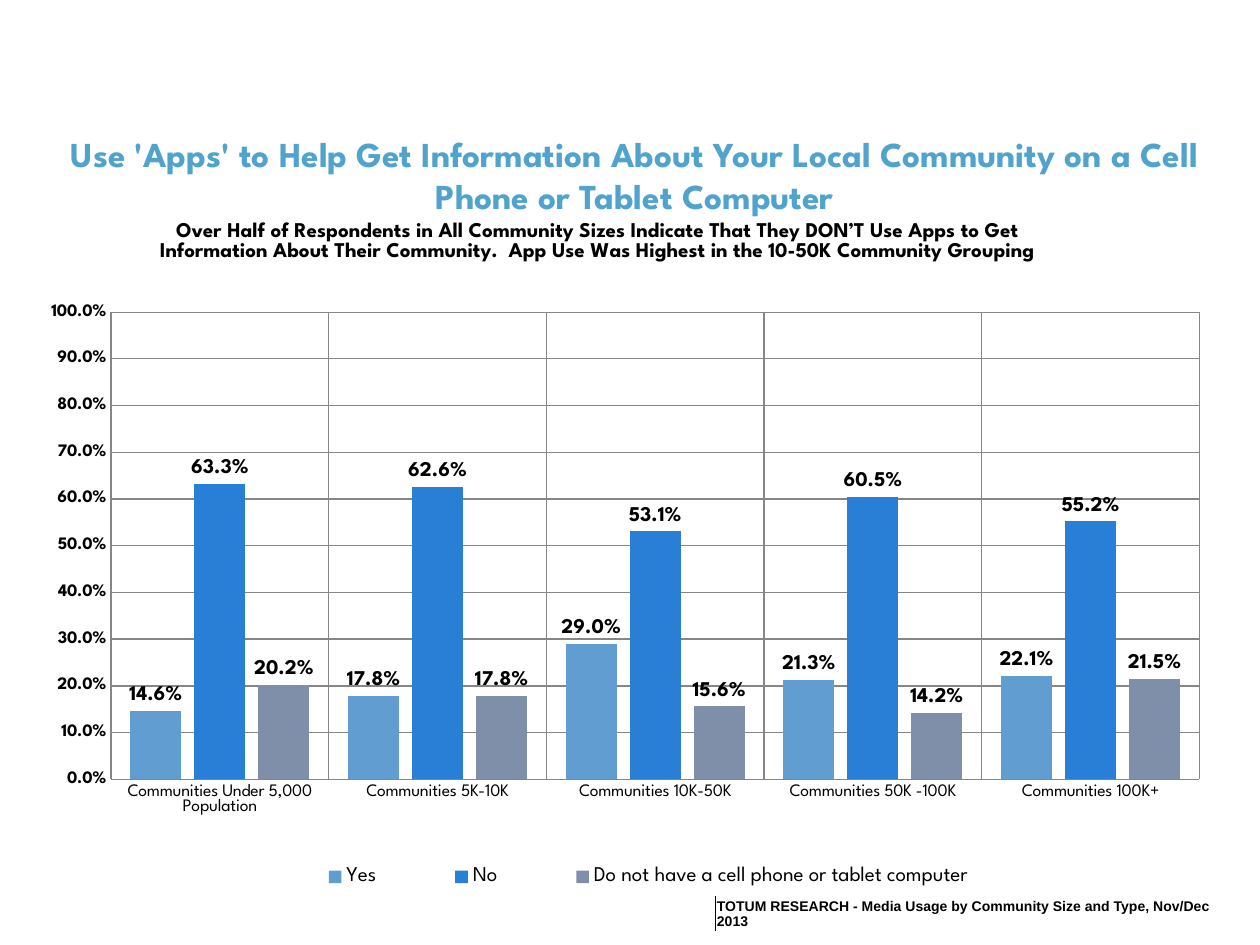
from lxml.etree import SubElement
from pptx import Presentation
from pptx.chart.data import CategoryChartData
from pptx.dml.color import RGBColor
from pptx.enum.chart import XL_CHART_TYPE, XL_LABEL_POSITION, XL_LEGEND_POSITION, XL_TICK_MARK
from pptx.enum.text import MSO_ANCHOR, PP_ALIGN
from pptx.oxml import parse_xml
from pptx.oxml.ns import nsdecls, qn
from pptx.util import Inches, Pt

# Content
FONT = "League Spartan"
TITLE = ("Use 'Apps' to Help Get Information About Your Local Community "
         "on a Cell Phone or Tablet Computer")
CHART_TITLE = ("Over Half of Respondents in All Community Sizes Indicate That They "
               "DON’T Use Apps to Get Information About Their Community.  "
               "App Use Was Highest in the 10-50K Community Grouping")
SOURCE = "TOTUM RESEARCH - Media Usage by Community Size and Type, Nov/Dec 2013"
CATEGORIES = ["Communities Under 5,000 Population", "Communities 5K-10K",
              "Communities 10K-50K", "Communities 50K -100K", "Communities 100K+"]
SERIES = [
    ("Yes", "629DD1", [14.6, 17.8, 29, 21.3, 22.1]),
    ("No", "297FD5", [63.3, 62.6, 53.1, 60.5, 55.2]),
    ("Do not have a cell phone or tablet computer", "7F8FA9",
     [20.2, 17.8, 15.6, 14.2, 21.5]),
]
PERCENT = r"0.0\%"
GRID = "868686"

# Chart parts, as fractions of the chart frame
PLOT_AREA = {"x": 0.067, "y": 0.193, "w": 0.917, "h": 0.618}
TITLE_AREA = {"x": 0.105, "y": 0.067}
LEGEND_AREA = {"x": 0.19, "y": 0.91, "w": 0.66, "h": 0.06}


def rgb(value):
    return RGBColor.from_string(value)


def style(font, size, color="000000", bold=False, name=FONT):
    font.name, font.size, font.bold = name, Pt(size), bold
    font.color.rgb = rgb(color)


def place(element, area, after=None, inner=False):
    """Give a chart part a fixed layout, set after the named child or first."""
    for old in element.findall(qn("c:layout")):
        element.remove(old)
    layout = parse_xml(f"<c:layout {nsdecls('c')}/>")
    manual = SubElement(layout, qn("c:manualLayout"))
    target = [("layoutTarget", "inner")] if inner else []
    for tag, value in [*target, ("xMode", "edge"), ("yMode", "edge"), *area.items()]:
        SubElement(manual, qn("c:" + tag)).set("val", str(value))
    if after:
        element.find(qn(after)).addnext(layout)
    else:
        element.insert(0, layout)


prs = Presentation()
prs.slide_width, prs.slide_height = Inches(10), Inches(7.5)
s = prs.slides.add_slide(prs.slide_layouts[5])

# Chart
data = CategoryChartData(number_format=PERCENT)
data.categories = CATEGORIES
for name, _, values in SERIES:
    data.add_series(name, values)
chart = s.shapes.add_chart(XL_CHART_TYPE.COLUMN_CLUSTERED, Inches(0.25), Inches(1.32),
                           Inches(9.42), Inches(6), data).chart
style(chart.font, 10)
tf = chart.chart_title.text_frame
tf.text = CHART_TITLE
style(tf.paragraphs[0].runs[0].font, 12, bold=True)
chart.chart_title.include_in_layout = False

chart.has_legend = True
chart.legend.position = XL_LEGEND_POSITION.BOTTOM
chart.legend.include_in_layout = False
style(chart.legend.font, 12)

# Axes
for axis, bold in ((chart.category_axis, False), (chart.value_axis, True)):
    axis.major_tick_mark = axis.minor_tick_mark = XL_TICK_MARK.NONE
    axis.has_major_gridlines = True
    axis.major_gridlines.format.line.color.rgb = rgb(GRID)
    style(axis.tick_labels.font, 10, bold=bold)
chart.category_axis.format.line.color.rgb = rgb(GRID)
axis = chart.value_axis
axis.format.line.fill.background()
axis.minimum_scale, axis.maximum_scale, axis.major_unit = 0, 100, 10
axis.tick_labels.number_format = PERCENT
axis.tick_labels.number_format_is_linked = False

# Columns and labels
plot = chart.plots[0]
plot.gap_width, plot.overlap, plot.vary_by_categories = 75, -25, False
for series, (_, color, _) in zip(plot.series, SERIES):
    series.format.fill.solid()
    series.format.fill.fore_color.rgb = rgb(color)
    labels = series.data_labels
    labels.show_value = True
    labels.position = XL_LABEL_POSITION.OUTSIDE_END
    labels.number_format, labels.number_format_is_linked = PERCENT, False
    style(labels.font, 12, bold=True)

# Fixed layout of the chart parts
root = chart.element.find(qn("c:chart"))
place(root.find(qn("c:plotArea")), PLOT_AREA, inner=True)
place(root.find(qn("c:title")), TITLE_AREA, after="c:tx")
place(root.find(qn("c:legend")), LEGEND_AREA, after="c:legendPos")

# Slide title
title = s.shapes.title
title.left, title.top, title.width, title.height = map(Inches, (0.35, 1, 9.38, 0.77))
tf = title.text_frame
tf.text = TITLE
tf.word_wrap, tf.vertical_anchor = True, MSO_ANCHOR.TOP
p = tf.paragraphs[0]
p.alignment = PP_ALIGN.CENTER
style(p.runs[0].font, 20, "50A3CD", True)

# Source table
table = s.shapes.add_table(1, 1, Inches(5.68), Inches(7.12), Inches(4.21), Inches(0.18)).table
table.first_row = table.horz_banding = False
cell = table.cell(0, 0)
cell.text = SOURCE
cell.fill.background()
cell.vertical_anchor = MSO_ANCHOR.BOTTOM
cell.margin_left = cell.margin_right = cell.margin_top = Inches(0.01)
cell.margin_bottom = 0
style(cell.text_frame.paragraphs[0].runs[0].font, 8, bold=True, name="Arial")
border = parse_xml(f'<a:lnL {nsdecls("a")} w="{Pt(0.5)}"><a:solidFill>'
                   '<a:srgbClr val="000000"/></a:solidFill></a:lnL>')
cell._tc.get_or_add_tcPr().insert(0, border)

prs.save("out.pptx")
